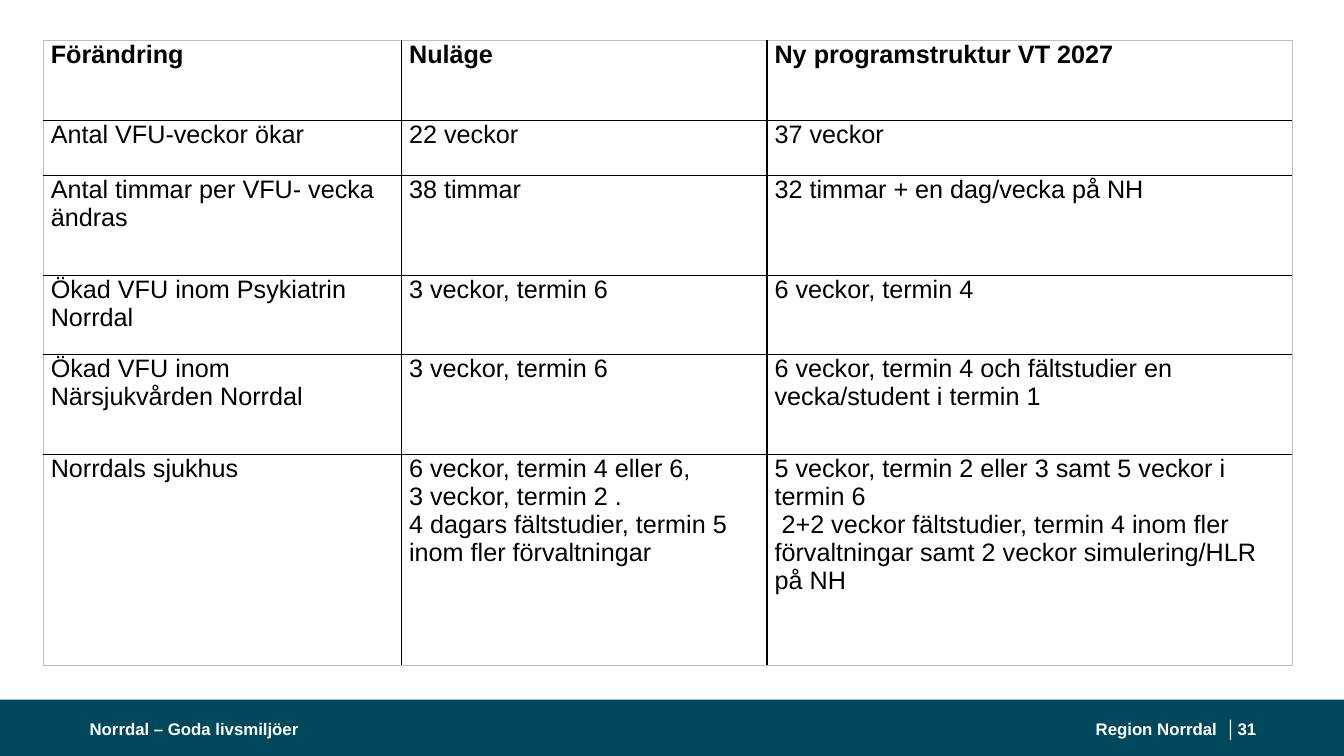
from lxml.etree import SubElement
from pptx import Presentation
from pptx.dml.color import RGBColor
from pptx.enum.shapes import MSO_SHAPE as Shape
from pptx.enum.text import MSO_ANCHOR as Anchor, PP_ALIGN as Align
from pptx.oxml.ns import qn
from pptx.util import Cm, Pt

PETROL = RGBColor(0x00, 0x49, 0x5D)
WHITE = RGBColor(0xFF, 0xFF, 0xFF)
BLACK = RGBColor(0x00, 0x00, 0x00)
GREY = RGBColor(0xBF, 0xBF, 0xBF)

SLIDE_WIDTH, SLIDE_HEIGHT = 33.87, 19.05
BAND_TOP = 17.63
COLUMN_WIDTHS = [9.03, 9.21, 13.23]
ROW_HEIGHTS = [2.01, 1.4, 2.51, 2.0, 2.51, 5.32]
CHANGES = [
    ["Förändring", "Nuläge", "Ny programstruktur VT 2027"],
    ["Antal VFU-veckor ökar", "22 veckor", "37 veckor"],
    ["Antal timmar per VFU- vecka ändras", "38 timmar", "32 timmar + en dag/vecka på NH"],
    ["Ökad VFU inom Psykiatrin Norrdal", "3 veckor, termin 6", "6 veckor, termin 4"],
    ["Ökad VFU inom Närsjukvården Norrdal", "3 veckor, termin 6",
     "6 veckor, termin 4 och fältstudier en vecka/student i termin 1"],
    ["Norrdals sjukhus",
     "6 veckor, termin 4 eller 6,\n3 veckor, termin 2 .\n"
     "4 dagars fältstudier, termin 5 inom fler förvaltningar",
     "5 veckor, termin 2 eller 3 samt 5 veckor i termin 6\n"
     " 2+2 veckor fältstudier, termin 4 inom fler förvaltningar "
     "samt 2 veckor simulering/HLR på NH"],
]


def write(frame, text, size=18, color=BLACK, bold=False, align=Align.LEFT, font="Arial"):
    """Fill a text frame, one paragraph per line of text."""
    frame.text = text
    for paragraph in frame.paragraphs:
        paragraph.alignment = align
        for run in paragraph.runs:
            run.font.name = font
            run.font.size = Pt(size)
            run.font.bold = bold
            run.font.color.rgb = color


def draw_border(cell, side, color, width):
    line = SubElement(cell._tc.get_or_add_tcPr(), qn(f"a:ln{side}"), w=str(Pt(width)))
    SubElement(SubElement(line, qn("a:solidFill")), qn("a:srgbClr"), val=str(color))


class SlideBuilder:
    def __init__(self, slide, margin=0.19):
        self.shapes = slide.shapes
        self.margin = Cm(margin)

    def band(self, top, color):
        height = SLIDE_HEIGHT - top
        band = self.shapes.add_shape(Shape.RECTANGLE, 0, Cm(top), Cm(SLIDE_WIDTH), Cm(height))
        band.shadow.inherit = False
        band.fill.solid()
        band.fill.fore_color.rgb = color
        band.line.fill.background()

    def footer(self, text, left, width, align=Align.LEFT):
        frame = self.shapes.add_textbox(Cm(left), Cm(17.93), Cm(width), Cm(0.89)).text_frame
        frame.margin_left = frame.margin_right = frame.margin_top = frame.margin_bottom = 0
        frame.word_wrap = True
        frame.vertical_anchor = Anchor.MIDDLE
        write(frame, text, size=12, color=WHITE, bold=True, align=align)

    def table(self, rows, left, top, widths, heights):
        table = self.shapes.add_table(len(rows), len(widths), Cm(left), Cm(top),
                                      Cm(sum(widths)), Cm(sum(heights))).table
        table.first_row = table.horz_banding = False
        for column, width in zip(table.columns, widths):
            column.width = Cm(width)
        for row, height in zip(table.rows, heights):
            row.height = Cm(height)
        for r, texts in enumerate(rows):
            for c, text in enumerate(texts):
                cell = table.cell(r, c)
                cell.margin_left = cell.margin_right = self.margin
                cell.margin_top = cell.margin_bottom = 0
                write(cell.text_frame, text, bold=r == 0)
                outer = {"L": c == 0, "R": c == len(widths) - 1,
                         "T": r == 0, "B": r == len(rows) - 1}
                for side, is_outer in outer.items():
                    draw_border(cell, side, *((GREY, 0.5) if is_outer else (BLACK, 1)))
                cell.fill.background()


def main():
    deck = Presentation()
    deck.slide_width, deck.slide_height = Cm(SLIDE_WIDTH), Cm(SLIDE_HEIGHT)
    builder = SlideBuilder(deck.slides.add_slide(deck.slide_layouts[6]))
    builder.band(BAND_TOP, PETROL)
    builder.footer("Region Norrdal  │", 27.18, 3.99, Align.RIGHT)
    builder.footer("Norrdal – Goda livsmiljöer", 2.26, 11.43)
    builder.footer("31", 31.19, 0.61)
    builder.table(CHANGES, 1.09, 1.02, COLUMN_WIDTHS, ROW_HEIGHTS)
    deck.save("out.pptx")


if __name__ == "__main__":
    main()
